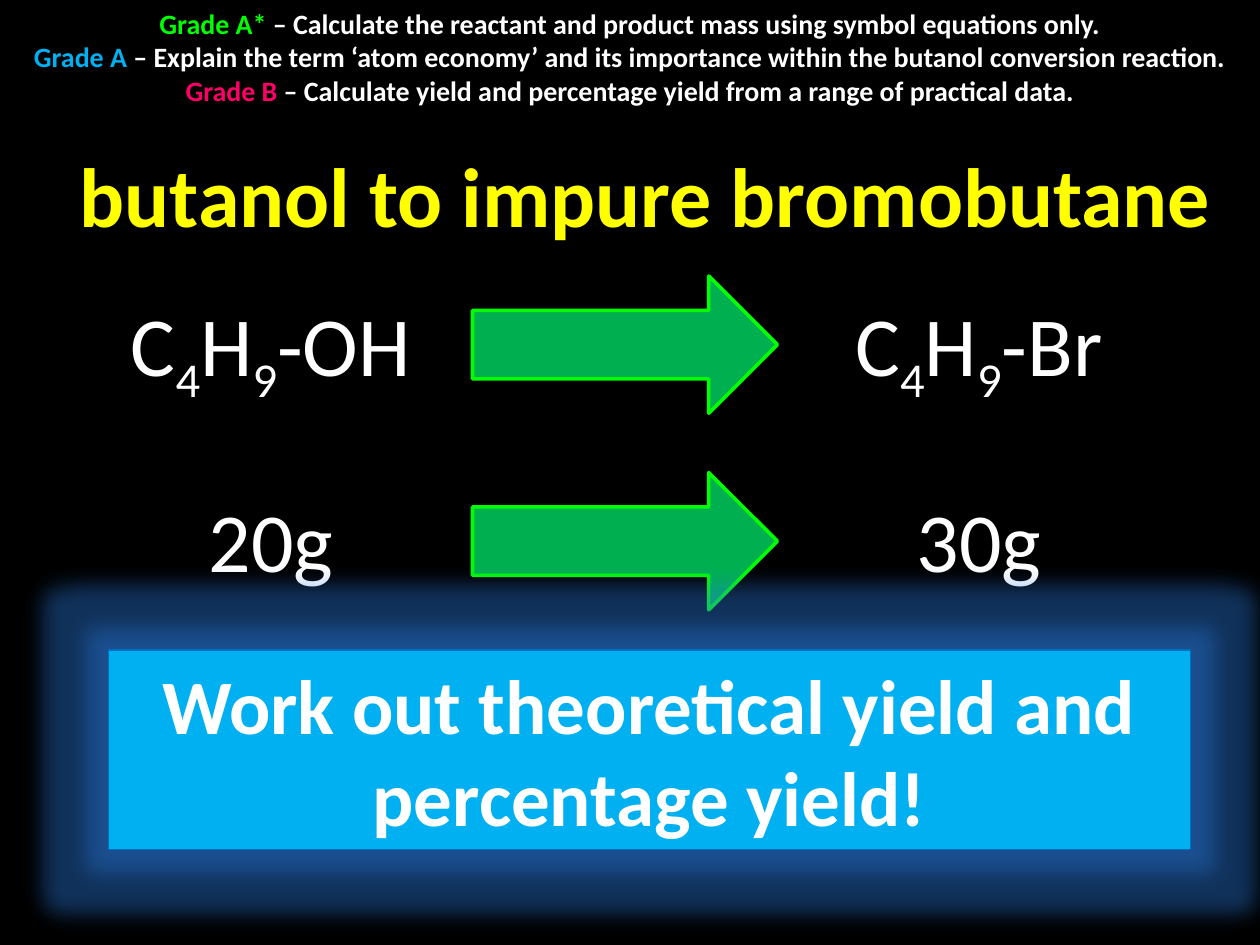
from lxml import etree
from pptx import Presentation
from pptx.dml.color import RGBColor
from pptx.enum import shapes, text
from pptx.oxml.ns import qn
from pptx.util import Inches, Pt

BLACK = RGBColor(0, 0, 0)
WHITE = RGBColor(255, 255, 255)
YELLOW = RGBColor(255, 255, 0)
LIME = RGBColor(0, 255, 0)
GREEN = RGBColor(0, 0xB0, 0x50)
SKY = RGBColor(0, 0xB0, 0xF0)
BLUE = RGBColor(0, 0x70, 0xC0)
PINK = RGBColor(255, 0, 0x66)
GLOW = RGBColor(0x2A, 0x7B, 0xE0)

TITLE = "butanol to impure bromobutane "
TASK = "Work out theoretical yield and percentage yield!"
GRADES = [
    ("Grade A* ", LIME, "– Calculate the reactant and product mass using symbol equations only."),
    ("Grade A ", SKY, "– Explain the term ‘atom economy’ and its importance within the "
                      "butanol conversion reaction."),
    ("Grade B ", PINK, "– Calculate yield and percentage yield from a range of practical data."),
]
# Each row: reactant, product; digits in a formula are subscripts
REACTIONS = [("C4H9-OH", "C4H9-Br", True), ("20g", "30g", False)]
ROW_TOP, ROW_STEP = 2.19, 1.56


def format_paragraph(p, size, color, bold):
    p.alignment = text.PP_ALIGN.CENTER
    p.font.name, p.font.size, p.font.bold = "Calibri", Pt(size), bold
    p.font.color.rgb = color


def add_text(slide, box, size, color=WHITE, bold=False, wrap=True):
    """Add a text box and return its text frame and formatted first paragraph."""
    tf = slide.shapes.add_textbox(*map(Inches, box)).text_frame
    tf.word_wrap = wrap
    format_paragraph(tf.paragraphs[0], size, color, bold)
    return tf, tf.paragraphs[0]


def add_shape(slide, kind, box, fill, line, width):
    sp = slide.shapes.add_shape(kind, *map(Inches, box))
    sp.shadow.inherit = False
    sp.fill.solid()
    sp.fill.fore_color.rgb = fill
    sp.line.color.rgb = line
    sp.line.width = Pt(width)
    return sp


def add_glow(sp, color, radius, alpha):
    effects = sp._element.spPr.find(qn("a:effectLst"))
    glow = etree.SubElement(effects, qn("a:glow"), rad=str(Inches(radius)))
    clr = etree.SubElement(glow, qn("a:srgbClr"), val=str(color))
    etree.SubElement(clr, qn("a:alpha"), val=str(alpha * 1000))


def add_substance(slide, left, top, label, is_formula):
    p = add_text(slide, (left, top, 2.58, 0.91), 48)[1]
    for part in (label if is_formula else [label]):
        r = p.add_run()
        r.text = part
        if is_formula and part.isdigit():
            r.font._element.set("baseline", "-25000")


def main():
    prs = Presentation()
    prs.slide_width, prs.slide_height = Inches(10), Inches(7.5)
    s = prs.slides.add_slide(prs.slide_layouts[6])
    s.background.fill.solid()
    s.background.fill.fore_color.rgb = BLACK

    add_text(s, (0.4, 1.09, 9.6, 0.91), 48, YELLOW, True, wrap=False)[1].add_run().text = TITLE

    for i, (reactant, product, is_formula) in enumerate(REACTIONS):
        top = ROW_TOP + i * ROW_STEP
        add_substance(s, 0.86, top + 0.08, reactant, is_formula)
        add_shape(s, shapes.MSO_SHAPE.RIGHT_ARROW, (3.75, top, 2.42, 1.09), GREEN, LIME, 2)
        add_substance(s, 6.48, top + 0.08, product, is_formula)

    task = add_shape(s, shapes.MSO_SHAPE.RECTANGLE, (0.86, 5.16, 8.59, 1.58), SKY, BLUE, 0.75)
    add_glow(task, GLOW, 0.35, 40)
    tf = task.text_frame
    tf.word_wrap = True
    tf.text = TASK
    format_paragraph(tf.paragraphs[0], 44, WHITE, True)

    tf, p = add_text(s, (0, 0, 10, 0.91), 16, bold=True)
    for i, (grade, color, aim) in enumerate(GRADES):
        if i:
            p = tf.add_paragraph()
            format_paragraph(p, 16, WHITE, True)
        r = p.add_run()
        r.text = grade
        r.font.color.rgb = color
        p.add_run().text = aim

    prs.save("out.pptx")


if __name__ == "__main__":
    main()
